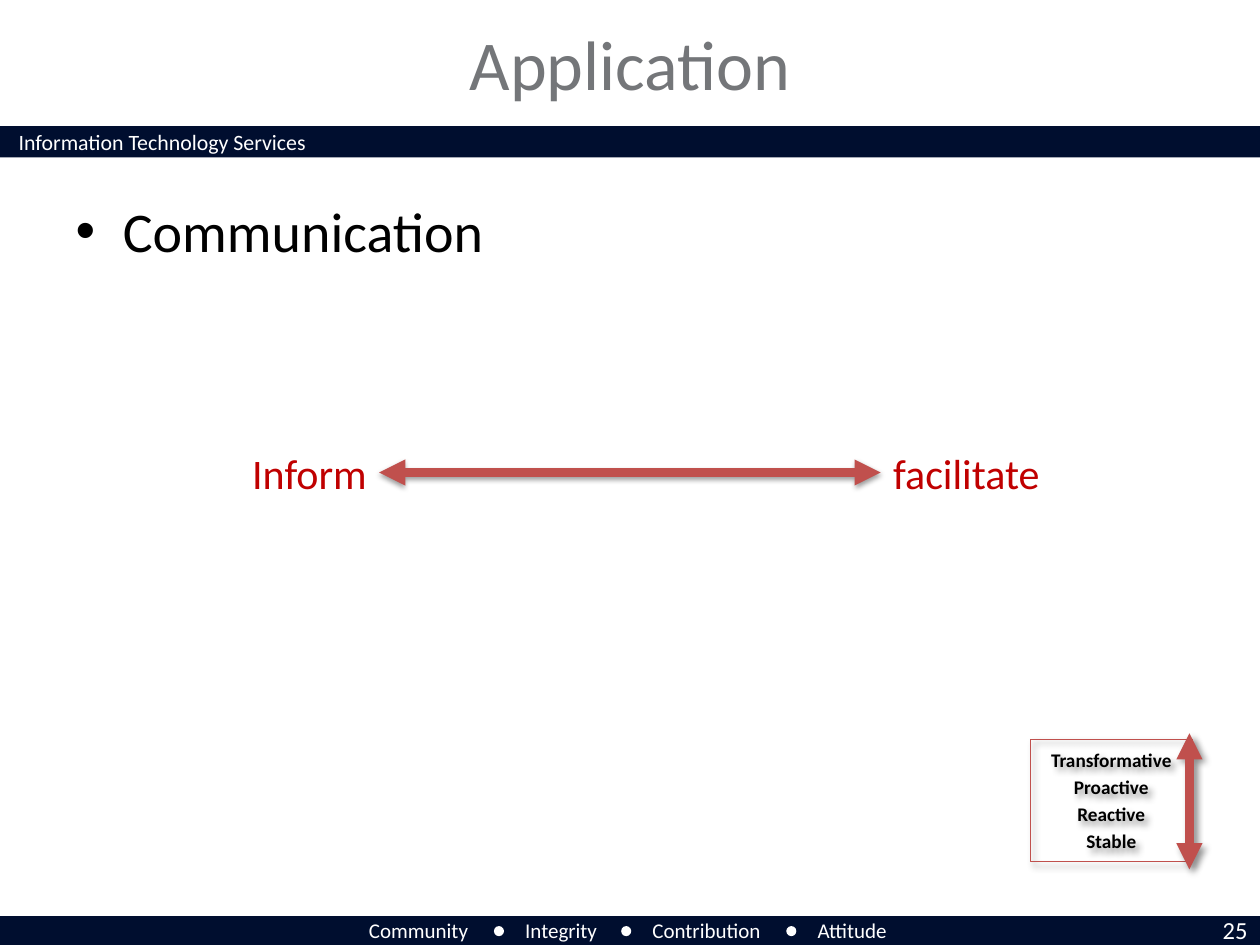
import lxml.etree
import pptx
import pptx.dml.color
import pptx.enum.shapes
import pptx.enum.text
import pptx.oxml
import pptx.oxml.ns
import pptx.util

Inches = pptx.util.Inches
Pt = pptx.util.Pt
SHAPE = pptx.enum.shapes.MSO_SHAPE
ALIGN = pptx.enum.text.PP_ALIGN
ANCHOR = pptx.enum.text.MSO_ANCHOR
FONT, NAVY, WHITE, BLACK, RED = "Calibri", "000E2F", "FFFFFF", "000000", "C0504D"


def color(value):
    return pptx.dml.color.RGBColor.from_string(value)


def add_shadow(shape, opacity, blur, distance, angle):
    """Give the shape a black outer shadow; opacity in percent, lengths in points."""
    effects = pptx.oxml.parse_xml(
        f'<a:effectLst {pptx.oxml.ns.nsdecls("a")}>'
        f'<a:outerShdw blurRad="{Pt(blur)}" dist="{Pt(distance)}" dir="{angle * 60000}" '
        f'algn="ctr" rotWithShape="0"><a:srgbClr val="{BLACK}">'
        f'<a:alpha val="{opacity * 1000}"/></a:srgbClr></a:outerShdw></a:effectLst>')
    shape._element.spPr.append(effects)


presentation = pptx.Presentation()
presentation.slide_width, presentation.slide_height = Inches(10), Inches(7.5)
slide = presentation.slides.add_slide(presentation.slide_layouts[1])
shapes = slide.shapes

# Header and footer bands, with the dots between the footer words
bands = [(SHAPE.RECTANGLE, 0, top, 10, 0.25, NAVY) for top in (1, 7.27)]
dots = [(SHAPE.OVAL, left, 7.35, 0.08, 0.08, WHITE) for left in (3.92, 4.93, 6.24)]
for kind, left, top, width, height, fill in bands + dots:
    shape = shapes.add_shape(kind, Inches(left), Inches(top), Inches(width), Inches(height))
    shape.shadow.inherit = False
    shape.fill.solid()
    shape.fill.fore_color.rgb = color(fill)
    shape.line.fill.background()

# Title and list
title, body = slide.placeholders[0], slide.placeholders[1]
for placeholder, text, box, size, text_color, alignment, anchor in [
    (title, "Application", (1, 0.1, 8, 0.8), 40, "747679", ALIGN.CENTER, ANCHOR.MIDDLE),
    (body, "Communication", (0.5, 1.51, 9, 0.81), 32, BLACK, ALIGN.LEFT, ANCHOR.TOP),
]:
    (placeholder.left, placeholder.top,
     placeholder.width, placeholder.height) = [Inches(length) for length in box]
    placeholder.text_frame.vertical_anchor = anchor
    paragraph = placeholder.text_frame.paragraphs[0]
    paragraph.alignment = alignment
    paragraph.space_before = Pt(0)
    run = paragraph.add_run()
    run.text = text
    run.font.name, run.font.size = FONT, Pt(size)
    run.font.color.rgb = color(text_color)

# Labels
labels = {}
for text, left, top, width, height, size, text_color, alignment, wrap in [
    ("Information Technology Services", 0.05, 0.97, 3.4, 0.32, 12.5, WHITE, ALIGN.LEFT, True),
    ("Community", 2.83, 7.23, 1, 0.3, 12, WHITE, ALIGN.LEFT, False),
    ("Integrity", 4.07, 7.23, 0.8, 0.3, 12, WHITE, ALIGN.LEFT, False),
    ("Contribution", 5.08, 7.23, 1.1, 0.3, 12, WHITE, ALIGN.LEFT, False),
    ("Attitude", 6.39, 7.23, 0.78, 0.3, 12, WHITE, ALIGN.LEFT, False),
    ("25", 9.24, 7.21, 0.76, 0.34, 14, WHITE, ALIGN.RIGHT, True),
    ("Inform", 1.89, 3.5, 1.12, 0.5, 24, "C00000", ALIGN.RIGHT, False),
    ("facilitate", 6.99, 3.5, 1.38, 0.5, 24, "C00000", ALIGN.LEFT, False),
]:
    label = shapes.add_textbox(Inches(left), Inches(top), Inches(width), Inches(height))
    label.text_frame.word_wrap = wrap
    paragraph = label.text_frame.paragraphs[0]
    paragraph.alignment = alignment
    run = paragraph.add_run()
    run.text = text
    run.font.name, run.font.size = FONT, Pt(size)
    run.font.color.rgb = color(text_color)
    labels[text] = label

# Box of maturity levels
levels = shapes.add_shape(SHAPE.RECTANGLE, Inches(8.18), Inches(5.87), Inches(1.28), Inches(0.97))
levels.fill.background()
levels.line.color.rgb = color(RED)
levels.line.width = Pt(0.75)
add_shadow(levels, 40, 4, 3, 45)
levels.text_frame.word_wrap = False
levels.text_frame.vertical_anchor = ANCHOR.MIDDLE
for index, level in enumerate(["Transformative", "Proactive", "Reactive", "Stable"]):
    paragraph = levels.text_frame.add_paragraph() if index else levels.text_frame.paragraphs[0]
    paragraph.alignment = ALIGN.CENTER
    paragraph.space_before = Pt(2.2 if index else 0)
    run = paragraph.add_run()
    run.text = level
    run.font.name, run.font.size, run.font.bold = FONT, Pt(11), True
    run.font.color.rgb = color(BLACK)

# Double-headed arrows
arrows = []
for x1, y1, x2, y2, shadow in [
    (3.01, 3.75, 6.99, 3.75, (38, 3.1, 1.6, 90)),
    (9.44, 5.82, 9.44, 6.9, (40, 4, 3, 45)),
]:
    arrow = shapes.add_connector(pptx.enum.shapes.MSO_CONNECTOR.STRAIGHT,
                                 Inches(x1), Inches(y1), Inches(x2), Inches(y2))
    arrow.line.color.rgb = color(RED)
    arrow.line.width = Pt(5)
    for end in ("a:headEnd", "a:tailEnd"):
        lxml.etree.SubElement(arrow.line._get_or_add_ln(), pptx.oxml.ns.qn(end), type="triangle")
    add_shadow(arrow, *shadow)
    arrows.append(arrow)
arrows[0].begin_connect(labels["Inform"], 3)
arrows[0].end_connect(labels["facilitate"], 1)

presentation.save("out.pptx")
